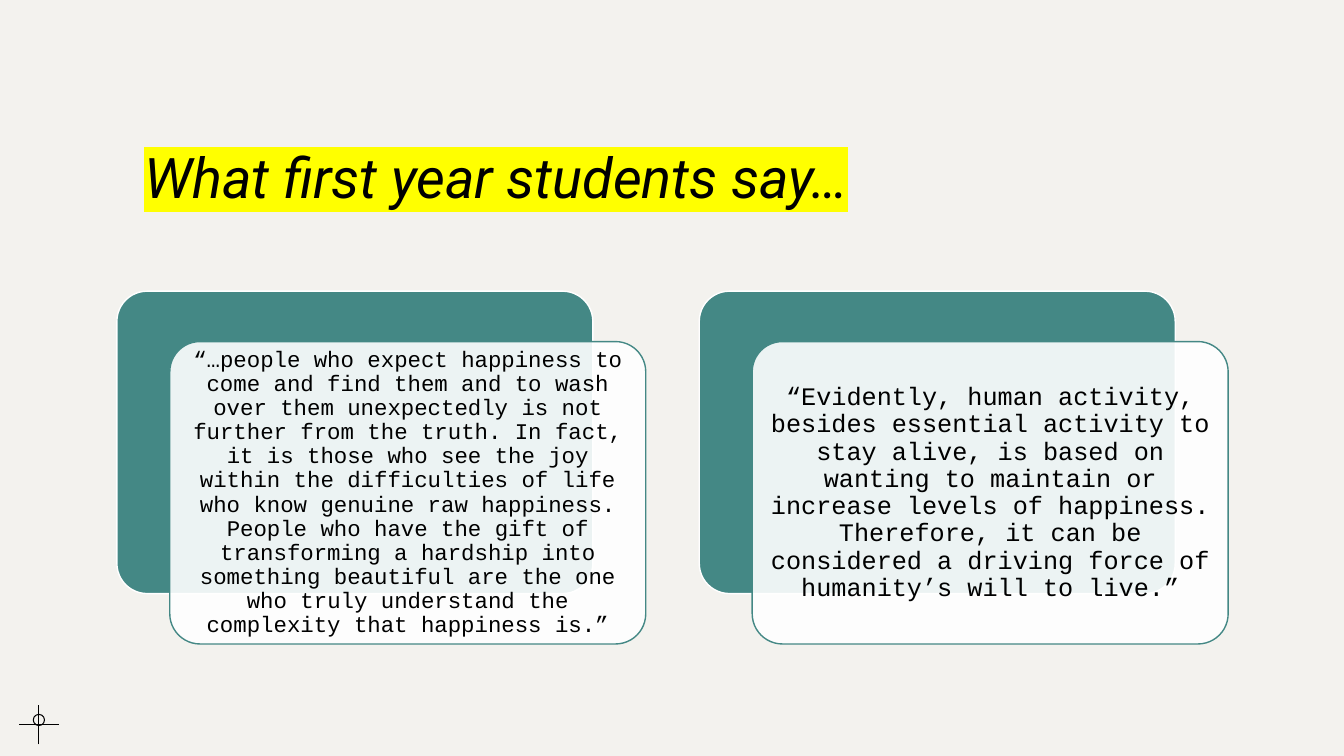
import pptx
import pptx.util
import pptx.dml.color
import pptx.enum.shapes
import pptx.enum.text
import pptx.oxml
import pptx.oxml.ns

Pt = pptx.util.Pt
RGBColor = pptx.dml.color.RGBColor
MSO_SHAPE = pptx.enum.shapes.MSO_SHAPE
MSO_ANCHOR = pptx.enum.text.MSO_ANCHOR
PP_ALIGN = pptx.enum.text.PP_ALIGN
qn = pptx.oxml.ns.qn

BACKGROUND = RGBColor(0xF3, 0xF2, 0xEE)
BLACK = RGBColor(0, 0, 0)
WHITE = RGBColor(0xFF, 0xFF, 0xFF)
TEAL = RGBColor(0x44, 0x88, 0x85)
YELLOW = RGBColor(0xFF, 0xFF, 0)

QUOTES = [
    ("“…people who expect happiness to come and find them and to wash over "
     "them unexpectedly is not further from the truth. In fact, it is those "
     "who see the joy within the difficulties of life who know genuine raw "
     "happiness. People who have the gift of transforming a hardship into "
     "something beautiful are the one who truly understand the complexity "
     "that happiness is.”", 16),
    ("“Evidently, human activity, besides essential activity to stay alive, "
     "is based on wanting to maintain or increase levels of happiness. "
     "Therefore, it can be considered a driving force of humanity’s will "
     "to live.”", 18),
]
CARD_LEFT, CARD_TOP = 83.5, 208
CARD_WIDTH, CARD_HEIGHT = 340, 216
CARD_PITCH = 416
FRONT_DX, FRONT_DY = 37.8, 36
TEXT_INSET = 6.3
TEXT_MARGIN = 5


def add_sub(parent, tag, **attrs):
    child = parent.makeelement(qn(tag), attrs)
    parent.append(child)
    return child


def add_text(slide, text, left, top, width, height, font, size, anchor):
    """Add a wrapping one-paragraph box; return its frame, paragraph and run."""
    tf = slide.shapes.add_textbox(Pt(left), Pt(top), Pt(width), Pt(height)).text_frame
    tf.word_wrap = True
    tf.vertical_anchor = anchor
    tf.text = text
    p = tf.paragraphs[0]
    r = p.runs[0]
    r.font.size = Pt(size)
    r.font.color.rgb = BLACK
    r.font.name = font
    return tf, p, r


def add_title(slide, text):
    _, p, r = add_text(slide, text, 96, 28.8, 747, 124.6, "Roboto", 40, MSO_ANCHOR.BOTTOM)
    p.line_spacing = 1.2
    r.font.italic = True
    highlight = pptx.oxml.parse_xml(
        f'<a:highlight {pptx.oxml.ns.nsdecls("a")}><a:srgbClr val="{YELLOW}"/></a:highlight>')
    r.font._element.find(qn("a:solidFill")).addnext(highlight)


def add_panel(slide, left, top, fill, line, alpha=None):
    sp = slide.shapes.add_shape(MSO_SHAPE.ROUNDED_RECTANGLE, Pt(left), Pt(top),
                                Pt(CARD_WIDTH), Pt(CARD_HEIGHT))
    sp.adjustments[0] = 0.1
    sp.shadow.inherit = False
    sp.fill.solid()
    sp.fill.fore_color.rgb = fill
    sp.line.color.rgb = line
    sp.line.width = Pt(1)
    if alpha is not None:
        color = sp._element.spPr.find(qn("a:solidFill")).find(qn("a:srgbClr"))
        add_sub(color, "a:alpha", val=str(alpha * 1000))


def add_quote_card(slide, left, quote, size):
    """Add a teal panel, a translucent panel offset over it, and the quote."""
    add_panel(slide, left, CARD_TOP, TEAL, WHITE)
    front_left, front_top = left + FRONT_DX, CARD_TOP + FRONT_DY
    add_panel(slide, front_left, front_top, WHITE, TEAL, alpha=90)
    tf, p, _ = add_text(slide, quote, front_left + TEXT_INSET, front_top + TEXT_INSET,
                        CARD_WIDTH - 2 * TEXT_INSET, CARD_HEIGHT - 2 * TEXT_INSET,
                        "Courier New", size, MSO_ANCHOR.MIDDLE)
    tf.margin_left = tf.margin_right = Pt(TEXT_MARGIN)
    tf.margin_top = tf.margin_bottom = Pt(TEXT_MARGIN)
    p.alignment = PP_ALIGN.CENTER
    p.line_spacing = 0.9


def add_line(slide, x1, y1, x2, y2):
    cxn = slide.shapes.add_connector(pptx.enum.shapes.MSO_CONNECTOR.STRAIGHT,
                                     Pt(x1), Pt(y1), Pt(x2), Pt(y2))
    cxn.line.color.rgb = BLACK
    cxn.line.width = Pt(0.75)
    add_sub(cxn._element.spPr, "a:effectLst")


def add_crosshair(slide, x, y, arm, ring_y, ring_size):
    add_line(slide, x - arm, y, x + arm, y)
    add_line(slide, x, y + arm, x, y - arm)
    sp = slide.shapes.add_shape(MSO_SHAPE.OVAL, Pt(x - ring_size / 2),
                                Pt(ring_y - ring_size / 2), Pt(ring_size), Pt(ring_size))
    sp.shadow.inherit = False
    sp.fill.background()
    sp.line.color.rgb = BLACK
    sp.line.width = Pt(0.75)


def main():
    prs = pptx.Presentation()
    prs.slide_width, prs.slide_height = Pt(960), Pt(540)
    slide = prs.slides.add_slide(prs.slide_layouts[6])
    slide.background.fill.solid()
    slide.background.fill.fore_color.rgb = BACKGROUND
    add_title(slide, "What first year students say…")
    add_crosshair(slide, x=27.8, y=517.5, arm=14.2, ring_y=514.3, ring_size=8)
    for i, (quote, size) in enumerate(QUOTES):
        add_quote_card(slide, CARD_LEFT + i * CARD_PITCH, quote, size)
    prs.save("out.pptx")


if __name__ == "__main__":
    main()
